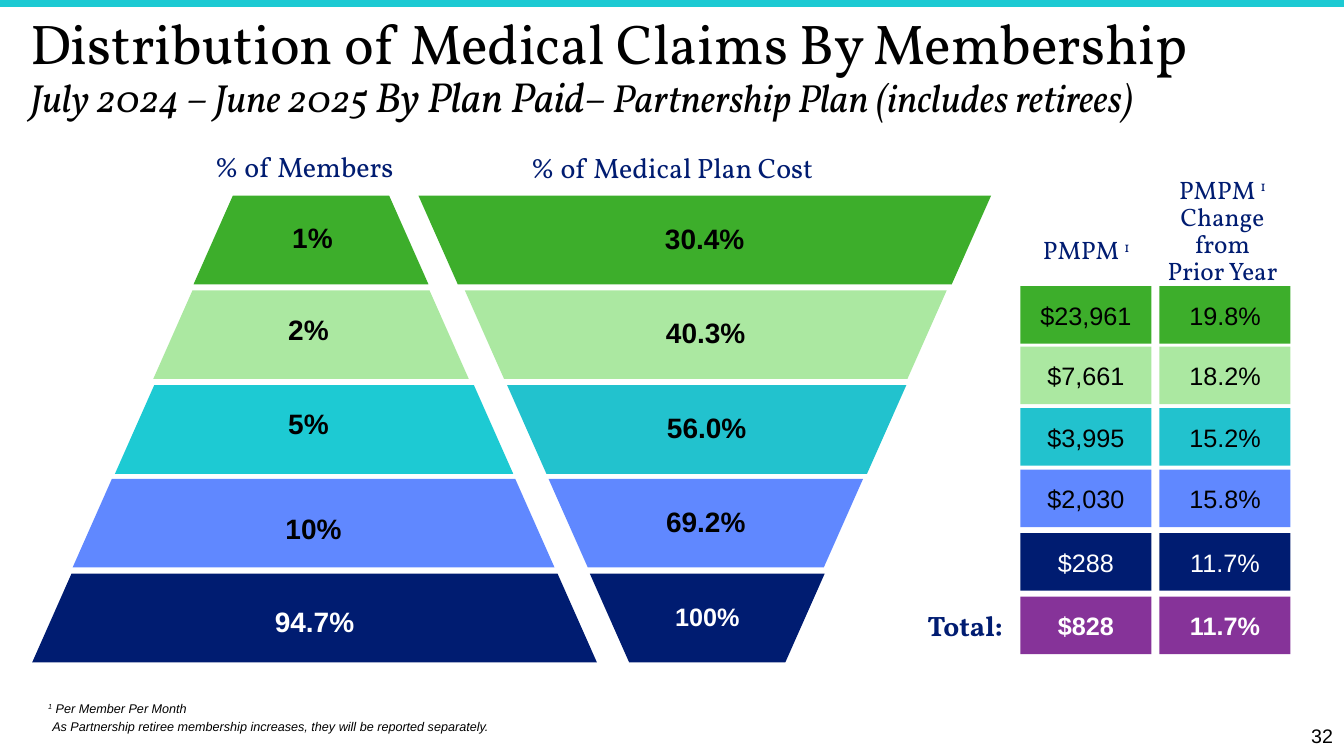
from pptx import Presentation
from pptx.dml.color import RGBColor
from pptx.enum.shapes import MSO_CONNECTOR, MSO_SHAPE
from pptx.enum.text import MSO_ANCHOR, PP_ALIGN
from pptx.oxml.ns import qn
from pptx.util import Pt
from lxml.etree import SubElement
from dataclasses import dataclass


@dataclass(frozen=True)
class Theme:
    head: str = "Vollkorn"
    body: str = "Arial"
    black: str = "000000"
    white: str = "FFFFFF"
    navy: str = "001C71"
    blue: str = "6088FF"
    teal: str = "22C2CE"
    aqua: str = "1DCAD3"
    mint: str = "ABE8A1"
    green: str = "3DAE2B"
    plum: str = "863399"
    title: int = 40
    sub: int = 28
    stress: int = 30
    label: int = 20
    cell: int = 18
    page: int = 14
    note: int = 9


T = Theme()
PX = 9144  # one px is a hundredth of an inch

# Content: runs are (text, format) pairs
TITLE = [
    ("Distribution of Medical Claims By Membership", {}),
    ("\n", {}),
    ("July 2024 – June 2025 ", {"size": T.sub, "italic": True}),
    ("By Plan Paid", {"size": T.stress, "italic": True}),
    ("– Partnership Plan (includes retirees)", {"size": T.sub, "italic": True}),
]
RAISED = ("1", {"raised": True})
PMPM = [("PMPM ", {}), RAISED]
CHANGE = PMPM + [(" Change from Prior Year", {})]
NOTES = [
    (38, 690, [RAISED, (" Per Member Per Month", {})]),
    (42, 708, "As Partnership retiree membership increases, they will be reported separately."),
]

# Bands: label, long edge from and to, fill
MEMBERS = [
    ("1%", 192, 425, T.green),
    ("2%", 152, 465, T.mint),
    ("5%", 114, 509, T.aqua),
    ("10%", 72, 550, T.blue),
    ("94.7%", 32, 592, T.navy),
]
COSTS = [
    ("30.4%", 415, 983, T.green),
    ("40.3%", 461, 939, T.mint),
    ("56.0%", 503, 899, T.teal),
    ("69.2%", 544, 856, T.blue),
    ("100%", 585, 818, T.navy),
]
LABELS = [(310, 218), (306, 309), (306, 402), (311, 506), (312, 599)]  # centre, top
BAND_TOP, BAND_STEP, BAND_H, SLANT = 194, 93.75, 88, 39

# Rows: top, cost, change, fill
ROWS = [
    (284, "$23,961", "19.8%", T.green),
    (344, "$7,661", "18.2%", T.mint),
    (405, "$3,995", "15.2%", T.teal),
    (466, "$2,030", "15.8%", T.blue),
    (529, "$288", "11.7%", T.navy),
    (592, "$828", "11.7%", T.plum),
]
COLS, CELL_W, CELL_H = (1012, 1150), 130, 57

deck = Presentation()
deck.slide_width, deck.slide_height = 1333 * PX, 750 * PX
slide = deck.slides.add_slide(deck.slide_layouts[6])
shapes = slide.shapes


def color(code):
    return RGBColor.from_string(code)


def ink(fill):
    return T.white if fill in (T.navy, T.plum) else T.black


def write(shape, text, size=T.label, font=T.body, tint=T.black, bold=False,
          italic=False, align=PP_ALIGN.LEFT, anchor=MSO_ANCHOR.TOP, space=0.9):
    frame = shape.text_frame
    frame.word_wrap, frame.vertical_anchor = True, anchor
    para = frame.paragraphs[0]
    para.alignment, para.line_spacing = align, space
    for words, extra in [(text, {})] if isinstance(text, str) else text:
        if words == "\n":
            para.add_line_break()
            continue
        run = para.add_run()
        run.text = words
        run.font.name = font
        run.font.size = Pt(extra.get("size", size))
        run.font.bold = bold
        run.font.italic = extra.get("italic", italic)
        run.font.color.rgb = color(tint)
        if extra.get("raised"):
            run._r.get_or_add_rPr().set("baseline", "30000")


def box(x, y, w, h, text, **form):
    write(shapes.add_textbox(x * PX, y * PX, w * PX, h * PX), text, **form)


def paint(shape, fill):
    shape.shadow.inherit = False
    shape.fill.solid()
    shape.fill.fore_color.rgb = color(fill)
    shape.line.fill.background()


def band(row, left, right, fill, wide_top):
    top = round(BAND_TOP + row * BAND_STEP)
    low = top + BAND_H
    wide, thin = (top, low) if wide_top else (low, top)
    pen = shapes.build_freeform(left, wide, scale=PX)
    pen.add_line_segments([(right, wide), (right - SLANT, thin), (left + SLANT, thin)], close=True)
    shape = pen.convert_to_shape()
    paint(shape, fill)
    return shape


MID = {"align": PP_ALIGN.CENTER, "anchor": MSO_ANCHOR.MIDDLE}

# Top rule, title and page number
rule = shapes.add_connector(MSO_CONNECTOR.STRAIGHT, 0, 3 * PX, 1333 * PX, 3 * PX)
rule.line.color.rgb = color(T.aqua)
rule.line.width = Pt(6)
SubElement(rule._element.spPr, qn("a:effectLst"))
box(20, 11, 1292, 145, TITLE, size=T.title, font=T.head)
box(1272, 719, 60, 25, "32", size=T.page, align=PP_ALIGN.RIGHT, anchor=MSO_ANCHOR.MIDDLE)

# Cost funnel
for row, (text, left, right, fill) in enumerate(COSTS):
    size = T.cell if fill == T.navy else T.label
    write(band(row, left, right, fill, True), text, size=size, bold=True, tint=ink(fill), **MID)

# Member pyramid
for row, (text, left, right, fill) in enumerate(MEMBERS):
    band(row, left, right, fill, False)
    mid, top = LABELS[row]
    box(mid - 60, top, 120, 40, text, bold=True, tint=ink(fill), align=PP_ALIGN.CENTER)

# Headings
HEAD = {"font": T.head, "tint": T.navy}
box(203, 147, 287, 73, "% of Members", **HEAD)
box(396, 148, 541, 92, "% of Medical Plan Cost", align=PP_ALIGN.CENTER, **HEAD)
box(1012, 231, 131, 92, PMPM, size=T.cell, align=PP_ALIGN.CENTER, **HEAD)
box(1145, 171, 135, 108, CHANGE, size=T.cell, align=PP_ALIGN.CENTER, **HEAD)
box(910, 603, 191, 92, "Total:", bold=True, **HEAD)

# Cost grid
for top, cost, change, fill in ROWS:
    for left, text in zip(COLS, (cost, change)):
        cell = shapes.add_shape(MSO_SHAPE.RECTANGLE, left * PX, top * PX, CELL_W * PX, CELL_H * PX)
        paint(cell, fill)
        write(cell, text, size=T.cell, tint=ink(fill), bold=fill == T.plum, space=1.0, **MID)

# Footnotes
for left, top, text in NOTES:
    box(left, top, 1108, 25, text, size=T.note, italic=True, space=1.0)

deck.save("out.pptx")
